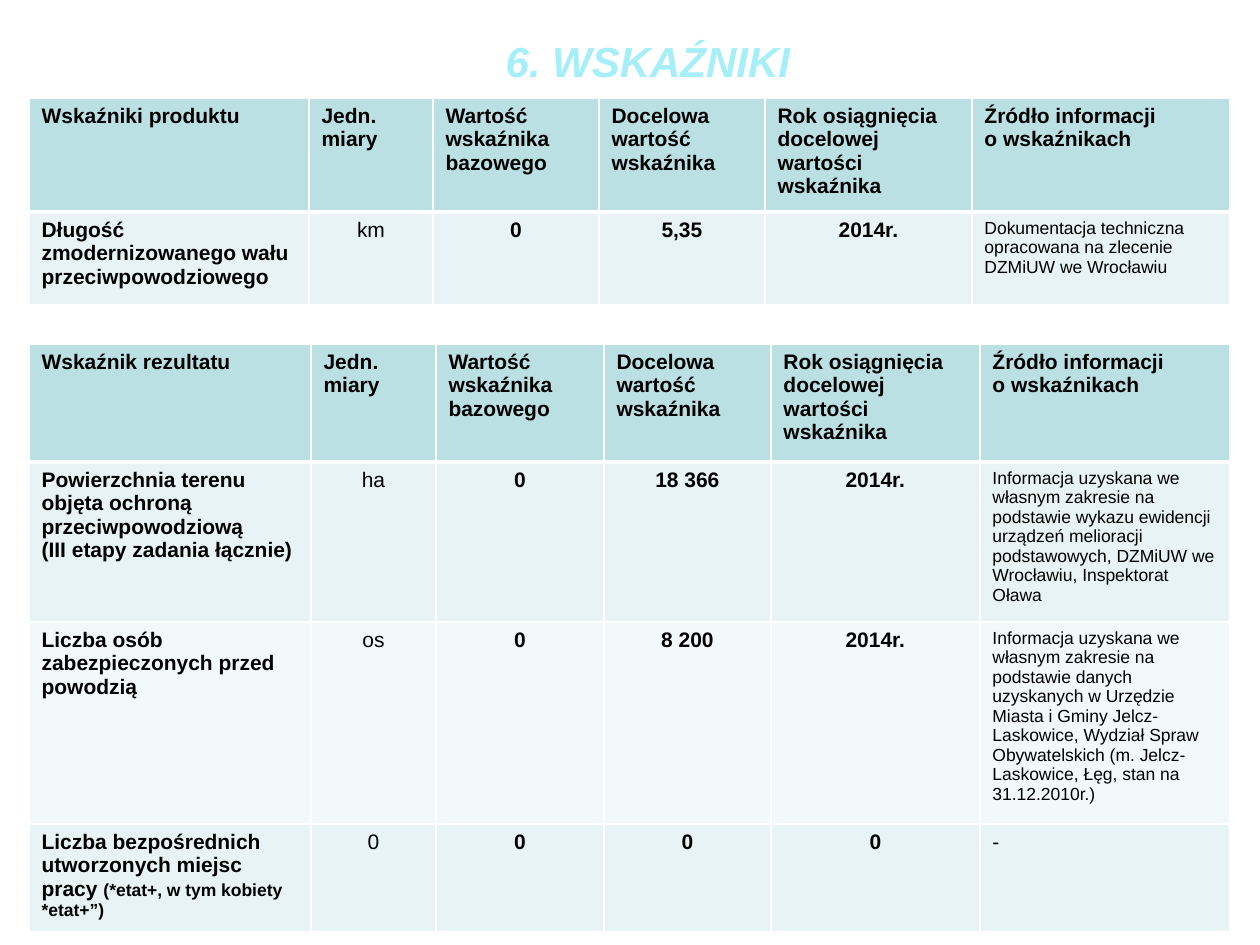
import pptx
import pptx.util
import pptx.dml.color
import pptx.enum.text
import pptx.oxml
import pptx.oxml.ns

SCALE = 914400 / 126  # EMU in one px
ALIGN = pptx.enum.text.PP_ALIGN
WHITE, HEAD, BAND, PALE = "FFFFFF", "BBE0E3", "E7F3F4", "F3F9FA"


def px(num):
    return pptx.util.Emu(round(num * SCALE))


def color(code):
    return pptx.dml.color.RGBColor.from_string(code)


def write(par, text, size=12, bold=True, slant=False, ink="000000",
          align=ALIGN.LEFT, face="Arial"):
    """Add text to a paragraph; a newline becomes a line break."""
    par.alignment = align
    for num, line in enumerate(text.split("\n")):
        if num:
            par.add_line_break()
        run = par.add_run()
        run.text = line
        font = run.font
        font.name, font.size = face, pptx.util.Pt(size)
        font.bold, font.italic = bold, slant
        font.color.rgb = color(ink)


def border(cell, top, base):
    """Draw white cell edges; top and base are widths in points."""
    props = cell._tc.get_or_add_tcPr()
    edges = (("L", 1), ("R", 1), ("T", top), ("B", base))
    for num, (side, width) in enumerate(edges):
        props.insert(num, pptx.oxml.parse_xml(
            f'<a:ln{side} {pptx.oxml.ns.nsdecls("a")} w="{width * 12700}">'
            f'<a:solidFill><a:srgbClr val="{WHITE}"/></a:solidFill>'
            f'</a:ln{side}>'))


class Deck:
    def __init__(self):
        self.show = pptx.Presentation()
        self.show.slide_width = px(1260)
        self.show.slide_height = px(945)
        self.slide = self.show.slides.add_slide(self.show.slide_layouts[5])
        fill = self.slide.background.fill
        fill.solid()
        fill.fore_color.rgb = color(WHITE)

    def title(self, text, left, top, width, height):
        box = self.slide.shapes.title
        box.left, box.top = px(left), px(top)
        box.width, box.height = px(width), px(height)
        frame = box.text_frame
        frame.word_wrap = True
        frame.auto_size = pptx.enum.text.MSO_AUTO_SIZE.NONE
        frame.vertical_anchor = pptx.enum.text.MSO_ANCHOR.TOP
        write(frame.paragraphs[0], text, size=24, slant=True, ink="A6EEF8")

    def table(self, left, top, cols, rows, data):
        grid = self.slide.shapes.add_table(
            len(rows), len(cols), px(left), px(top),
            px(sum(cols)), px(sum(rows))).table
        grid.first_row = grid.horz_banding = False
        for col, width in zip(grid.columns, cols):
            col.width = px(width)
        for row, height in zip(grid.rows, rows):
            row.height = px(height)
        for r, line in enumerate(data):
            for c, text in enumerate(line):
                self.cell(grid.cell(r, c), text, r, c)

    def cell(self, cell, text, r, c):
        cell.fill.solid()
        cell.fill.fore_color.rgb = color(
            HEAD if r == 0 else BAND if r % 2 else PALE)
        border(cell, 3 if r == 1 else 1, 3 if r == 0 else 1)
        par = cell.text_frame.paragraphs[0]
        if r == 0 or c == 0:
            # A pair holds the main words and a smaller remark
            main, *note = (text,) if isinstance(text, str) else text
            write(par, main)
            for part in note:
                write(par, part, size=10)
        elif c == 5:
            write(par, text, size=12 if text == "-" else 10, bold=False)
        else:
            write(par, text, bold=c > 1, align=ALIGN.CENTER)


def header(name):
    return [name, "Jedn. miary", "Wartość wskaźnika bazowego",
            "Docelowa wartość wskaźnika",
            "Rok osiągnięcia docelowej wartości wskaźnika",
            "Źródło informacji\no wskaźnikach"]


def main():
    deck = Deck()
    deck.title("6. WSKAŹNIKI", 493, 29, 561, 63)

    # Product indicators
    deck.table(29, 98, [280, 124, 166, 166, 207, 258], [114, 93], [
        header("Wskaźniki produktu"),
        ["Długość zmodernizowanego wału przeciwpowodziowego",
         "km", "0", "5,35", "2014r.",
         "Dokumentacja techniczna opracowana na zlecenie "
         "DZMiUW we Wrocławiu"],
    ])

    # Result indicators
    deck.table(29, 344, [282, 125, 168, 167, 209, 250],
               [118, 160, 202, 108], [
        header("Wskaźnik rezultatu"),
        ["Powierzchnia terenu objęta ochroną przeciwpowodziową\n"
         "(III etapy zadania łącznie)",
         "ha", "0", "18 366", "2014r.",
         "Informacja uzyskana we własnym zakresie na podstawie wykazu "
         "ewidencji urządzeń melioracji podstawowych, DZMiUW we "
         "Wrocławiu, Inspektorat Oława"],
        ["Liczba osób zabezpieczonych przed powodzią",
         "os", "0", "8 200", "2014r.",
         "Informacja uzyskana we własnym zakresie na podstawie danych "
         "uzyskanych w Urzędzie Miasta i Gminy Jelcz-Laskowice, Wydział "
         "Spraw Obywatelskich (m. Jelcz-Laskowice, Łęg, stan na "
         "31.12.2010r.)"],
        [("Liczba bezpośrednich utworzonych miejsc pracy ",
          "(*etat+, w tym kobiety *etat+”)"),
         "0", "0", "0", "0", "-"],
    ])
    deck.show.save("out.pptx")


if __name__ == "__main__":
    main()
